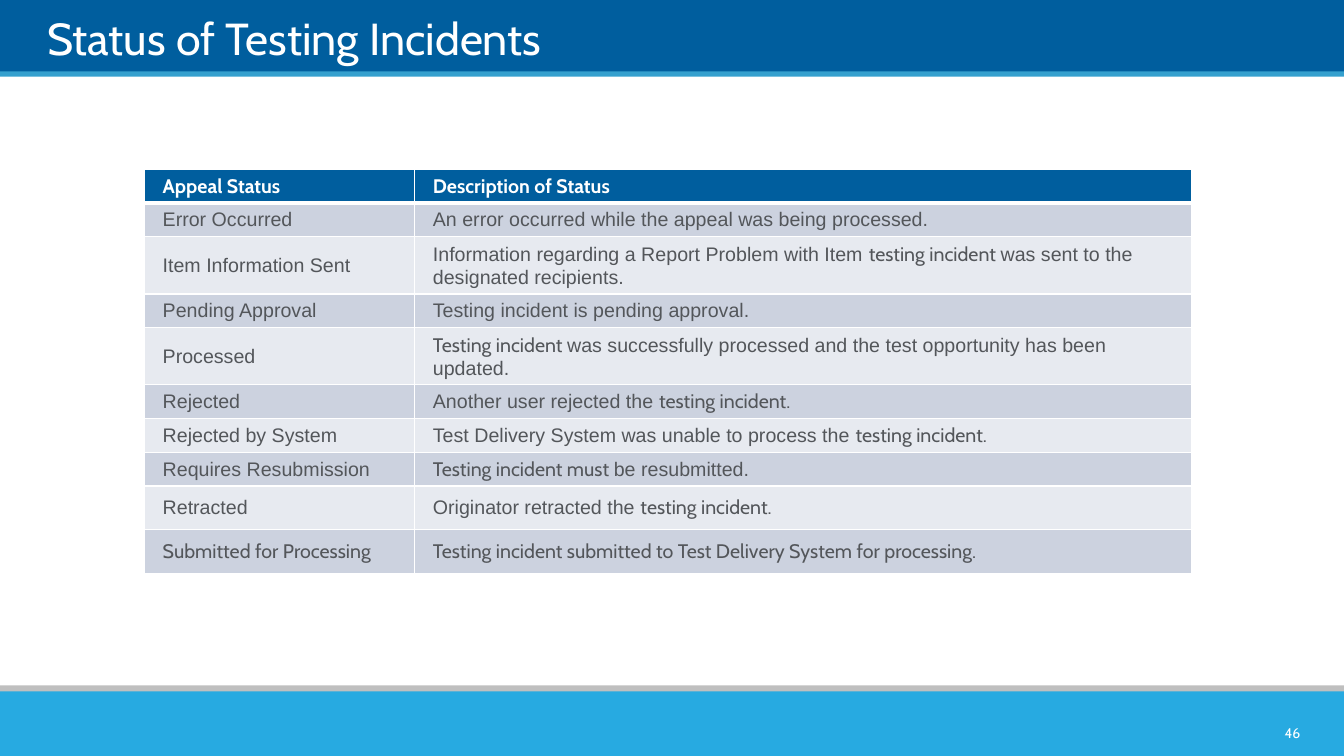
from dataclasses import dataclass
from lxml.etree import SubElement
from pptx import Presentation
from pptx.dml.color import RGBColor
from pptx.enum.shapes import MSO_SHAPE
from pptx.enum.text import MSO_ANCHOR, PP_ALIGN
from pptx.oxml.ns import qn
from pptx.util import Cm, Pt


@dataclass
class Theme:
    navy: str = "005E9E"
    sky: str = "35A0CE"
    cyan: str = "27AAE1"
    gray: str = "BFBFBF"
    white: str = "FFFFFF"
    ink: str = "53565A"
    odd: str = "CCD2DF"
    even: str = "E7EAF0"
    head: str = "Cabin"
    body: str = "Arial"
    title: int = 32
    text: int = 14
    small: int = 10


theme = Theme()
WIDTH, HEIGHT = 33.87, 19.05

# Text between asterisks is set in the heading font; heights are in cm
ROWS = [
    (0.85, "*Appeal Status*", "*Description of Status*"),
    (0.82, "Error Occurred",
     "An error occurred while the appeal was being processed."),
    (1.42, "Item Information Sent",
     "Information regarding a Report Problem with Item *testing incident *"
     "was sent to the designated recipients."),
    (0.82, "Pending Approval", "Testing incident is pending approval."),
    (1.42, "Processed",
     "*Testing incident *was successfully processed and the test "
     "opportunity has been updated."),
    (0.85, "Rejected", "Another user rejected the *testing incident.*"),
    (0.85, "Rejected by System",
     "Test Delivery System was unable to process the *testing incident.*"),
    (0.85, "Requires Resubmission",
     "*Testing incident must *be resubmitted."),
    (1.1, "Retracted", "Originator retracted the *testing incident.*"),
    (1.1, "*Submitted for Processing*",
     "*Testing incident submitted to Test Delivery System for processing.*"),
]


def style(font, name, size, color, bold=False):
    font.name, font.size, font.bold = name, Pt(size), bold
    font.color.rgb = RGBColor.from_string(color)


def band(slide, top, height, color):
    bar = slide.shapes.add_shape(
        MSO_SHAPE.RECTANGLE, 0, Cm(top), Cm(WIDTH), Cm(height))
    bar.shadow.inherit = False
    bar.fill.solid()
    bar.fill.fore_color.rgb = RGBColor.from_string(color)
    bar.line.fill.background()


def label(slide, box, text, size, anchor, align):
    frame = slide.shapes.add_textbox(*map(Cm, box)).text_frame
    frame.word_wrap = True
    frame.vertical_anchor = anchor
    frame.margin_left = frame.margin_right = 0
    frame.margin_top = frame.margin_bottom = 0
    frame.text = text
    line = frame.paragraphs[0]
    line.alignment = align
    style(line.runs[0].font, theme.head, size, theme.white)


# Title bar with its thin accent line
def header(slide, top, height, text):
    band(slide, top, height, theme.navy)
    band(slide, top + height - 0.07, 0.13, theme.sky)
    label(slide, (1.19, top + 0.21, 30.61, 1.45), text, theme.title,
          MSO_ANCHOR.BOTTOM, PP_ALIGN.LEFT)


# Bottom bar with the page number
def footer(slide, top, number):
    band(slide, top, 0.36, theme.gray)
    band(slide, top + 0.15, HEIGHT - top - 0.15, theme.cyan)
    label(slide, (31.52, top + 0.81, 1.25, 0.79), number, theme.small,
          MSO_ANCHOR.MIDDLE, PP_ALIGN.RIGHT)


def border(cell, low):
    props = cell._tc.get_or_add_tcPr()
    for side, width in (("L", 1), ("R", 1), ("T", 1), ("B", low)):
        line = SubElement(props, qn("a:ln" + side), w=str(Pt(width)))
        fill = SubElement(line, qn("a:solidFill"))
        SubElement(fill, qn("a:srgbClr"), val=theme.white)


def fill_cell(cell, text, top):
    border(cell, 3 if top else 1)
    cell.margin_left = Cm(0.46)
    cell.vertical_anchor = MSO_ANCHOR.TOP if top else MSO_ANCHOR.MIDDLE
    line = cell.text_frame.paragraphs[0]
    for i, part in enumerate(text.split("*")):
        if part:
            run = line.add_run()
            run.text = part
            style(run.font, theme.head if i % 2 else theme.body, theme.text,
                  theme.white if top else theme.ink, top)


# Table of states
def grid(slide, left, top, widths):
    total = sum(row[0] for row in ROWS)
    table = slide.shapes.add_table(
        len(ROWS), len(widths), Cm(left), Cm(top),
        Cm(sum(widths)), Cm(total)).table
    for col, width in zip(table.columns, widths):
        col.width = Cm(width)
    for r, (height, *texts) in enumerate(ROWS):
        table.rows[r].height = Cm(height)
        color = theme.odd if r % 2 else theme.even
        for c, text in enumerate(texts):
            cell = table.cell(r, c)
            fill_cell(cell, text, r == 0)
            cell.fill.solid()
            cell.fill.fore_color.rgb = RGBColor.from_string(
                color if r else theme.navy)


def main():
    deck = Presentation()
    deck.slide_width, deck.slide_height = Cm(WIDTH), Cm(HEIGHT)
    slide = deck.slides.add_slide(deck.slide_layouts[6])
    header(slide, -0.03, 1.9, "Status of Testing Incidents")
    footer(slide, 17.27, "46")
    grid(slide, 3.64, 4.27, (6.81, 19.58))
    deck.save("out.pptx")


if __name__ == "__main__":
    main()
